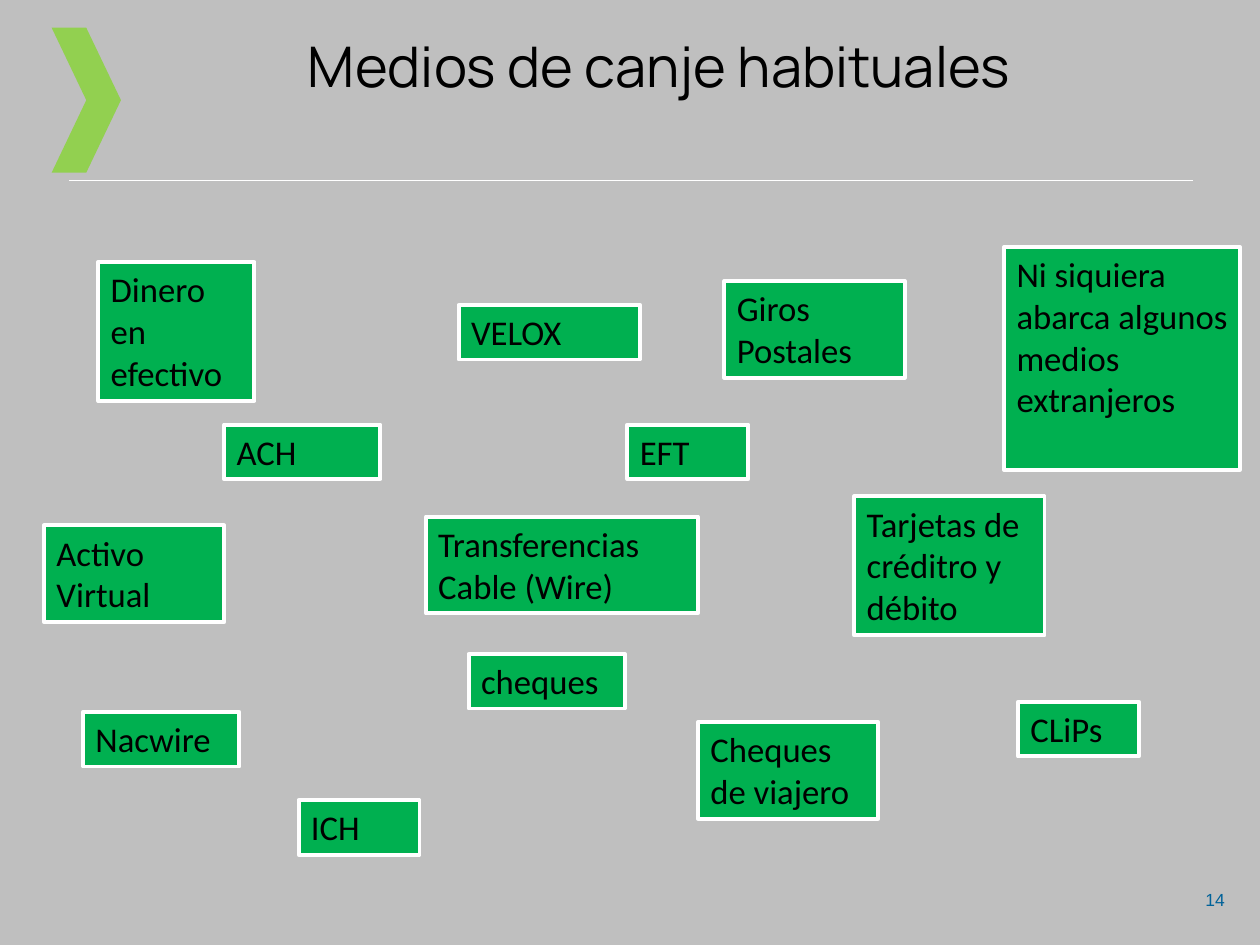
"""Build the slide of common means of exchange."""
import pptx
import pptx.dml.color
import pptx.enum.shapes
import pptx.enum.text
import pptx.oxml.ns
import pptx.util
from lxml import etree

RGB = pptx.dml.color.RGBColor
GREY, GREEN, LIME = RGB(0xBF, 0xBF, 0xBF), RGB(0x00, 0xB0, 0x50), RGB(0x92, 0xD0, 0x50)
WHITE, BLACK, BLUE = RGB(255, 255, 255), RGB(0, 0, 0), RGB(0x00, 0x62, 0x99)
ALIGN, ANCHOR = pptx.enum.text.PP_ALIGN, pptx.enum.text.MSO_ANCHOR
SHAPE = pptx.enum.shapes.MSO_SHAPE

deck = pptx.Presentation()
deck.slide_width, deck.slide_height = pptx.util.Inches(10), pptx.util.Inches(7.5)
COL, ROW = deck.slide_width / 100, deck.slide_height / 75


def place(x, y, wide, high):
    return [int(n) for n in (x * COL, y * ROW, wide * COL, high * ROW)]


def write(frame, text, align, size, face, color, form):
    for key, value in form.items():
        setattr(frame, key, value)
    frame.text = text
    for para in frame.paragraphs:
        para.alignment = align
        font = para.runs[0].font
        look = {"size": pptx.util.Pt(size), "name": face, "bold": False}
        for key, value in look.items():
            setattr(font, key, value)
        font.color.rgb = color


slide = deck.slides.add_slide(deck.slide_layouts[5])
slide.background.fill.solid()
slide.background.fill.fore_color.rgb = GREY

x, y, wide, _ = place(5.5, 14.3, 89.2, 0)
rule = slide.shapes.add_connector(
    pptx.enum.shapes.MSO_CONNECTOR.STRAIGHT, x, y, x + wide, y)
rule.line.color.rgb = WHITE
rule.line.width = pptx.util.Pt(0.5)
etree.SubElement(rule.element.spPr, pptx.oxml.ns.qn("a:effectLst"))

mark = slide.shapes.add_shape(SHAPE.CHEVRON, *place(4.1, 2.2, 5.5, 11.5))
mark.shadow.inherit = False
mark.fill.solid()
mark.fill.fore_color.rgb = LIME
mark.line.fill.background()

title = slide.shapes.title
title.left, title.top, title.width, title.height = place(11.8, 2.6, 81.1, 11.2)
write(title.text_frame, "Medios de canje habituales", ALIGN.CENTER, 32, "Manrope", BLACK,
      {"vertical_anchor": ANCHOR.MIDDLE, "margin_bottom": int(6.6 * ROW), "word_wrap": True})

page = slide.shapes.add_textbox(*place(94.5, 70.1, 3.7, 2.7))
write(page.text_frame, "14", ALIGN.RIGHT, 10, "Arial", BLUE, {"word_wrap": False})

CARDS = [
    ("Dinero en efectivo", 7.8, 20.8, 12.4, 3),
    ("Transferencias\nCable (Wire)", 33.8, 41, 21.6, 2),
    ("ACH", 17.8, 33.7, 12.4, 1),
    ("Nacwire", 6.6, 56.5, 12.4, 1),
    ("Activo Virtual", 3.5, 41.7, 14.3, 2),
    ("ICH", 23.7, 63.5, 9.6, 1),
    ("EFT", 49.8, 33.7, 9.6, 1),
    ("Giros Postales", 57.5, 22.3, 14.3, 2),
    ("cheques", 37.2, 51.9, 12.4, 1),
    ("CLiPs", 80.8, 55.7, 9.6, 1),
    ("Cheques de viajero", 55.4, 57.3, 14.3, 2),
    ("Ni siquiera abarca algunos medios extranjeros", 79.7, 19.6, 18.7, 5),
    ("Tarjetas de créditro y débito", 67.8, 39.4, 15.1, 3),
    ("VELOX", 36.4, 24.2, 14.4, 1),
]
for text, x, y, wide, lines in CARDS:
    card = slide.shapes.add_shape(SHAPE.RECTANGLE, *place(x, y, wide, 1 + 3.34 * lines))
    card.shadow.inherit = False
    card.fill.solid()
    card.fill.fore_color.rgb = GREEN
    card.line.color.rgb = WHITE
    card.line.width = pptx.util.Pt(2.25)
    write(card.text_frame, text, ALIGN.LEFT, 19.8, "Calibri", BLACK,
          {"vertical_anchor": ANCHOR.TOP, "word_wrap": True})

deck.save("out.pptx")
